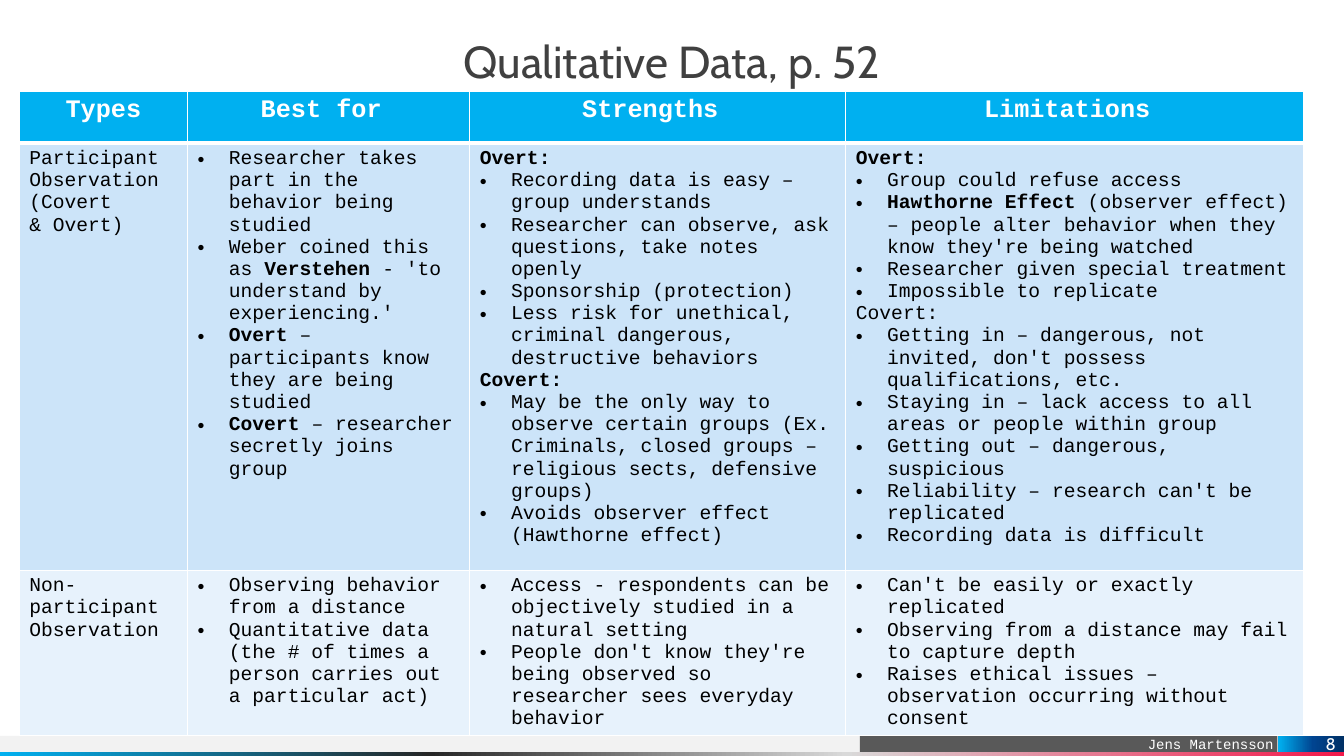
"""Build a slide that compares two kinds of observation in a table."""
from dataclasses import dataclass

from lxml import etree
from pptx import Presentation, util as u
from pptx.dml.color import RGBColor
from pptx.enum import shapes, text
from pptx.oxml.ns import qn


@dataclass(frozen=True)
class Theme:
    """Colours, fonts and type sizes."""
    head: str = "Cabin"
    body: str = "Courier New"
    title: int = 32
    label: int = 18
    cell: int = 14
    foot: int = 10
    page: int = 12
    white: str = "FFFFFF"
    black: str = "000000"
    ink: str = "404040"
    blue: str = "00B0F0"
    pale: str = "F2F2F2"
    gray: str = "595959"
    rows: tuple = ("00B0F0", "CCE4F9", "E7F2FC")
    strip: tuple = ((0, "F2194A"), (37, "D9D9D9"), (68, "262626"), (100, "00B0F0"))
    badge: tuple = ((0, "003065"), (47, "004490"), (100, "00B0F0"))


T = Theme()
WIDE, HIGH = u.Inches(13.33), u.Inches(7.5)
COLS = (12.53, 21, 27.98, 34.06)
ROWS = (6.8, 56.53, 21.87)
INDENT = u.Inches(0.31)
NB = chr(160)

HEADS = ["Types"] + [name + NB for name in ("Best for", "Strengths", "Limitations")]
ACTIVE = [
    [f"Participant Observation (Covert &{NB}Overt)"],
    ["• Researcher takes part in the behavior being studied",
     "• Weber coined this as *Verstehen *- 'to understand by experiencing.'",
     "• *Overt *– participants know they are being studied",
     "• *Covert *– researcher secretly joins group"],
    ["*Overt:*",
     "• Recording data is easy – group understands",
     "• Researcher can observe, ask questions, take notes openly",
     "• Sponsorship (protection)",
     "• Less risk for unethical, criminal dangerous, destructive behaviors",
     "*Covert:*",
     "• May be the only way to observe certain groups (Ex. Criminals, "
     "closed groups – religious sects, defensive groups)",
     "• Avoids observer effect (Hawthorne effect)"],
    ["*Overt:*",
     "• Group could refuse access",
     "• *Hawthorne Effect* (observer effect) – people alter behavior "
     "when they know they're being watched",
     "• Researcher given special treatment",
     "• Impossible to replicate",
     "Covert:",
     "• Getting in – dangerous, not invited, don't possess qualifications, etc.",
     "• Staying in – lack access to all areas or people within group",
     "• Getting out – dangerous, suspicious",
     "• Reliability – research can't be replicated",
     "• Recording data is difficult"],
]
PASSIVE = [
    ["Non-participant Observation"],
    ["• Observing behavior from a distance",
     "• Quantitative data (the # of times a person carries out a particular act)"],
    ["• Access - respondents can be objectively studied in a natural setting",
     "• People don't know they're being observed so researcher sees everyday behavior"],
    ["• Can't be easily or exactly replicated",
     "• Observing from a distance may fail to capture depth",
     "• Raises ethical issues – observation occurring without consent"],
]
GRID = [[[f"*{head}*"] for head in HEADS], ACTIVE, PASSIVE]


def across(share):
    """Turn a percentage of the slide's width into a length."""
    return u.Emu(int(WIDE * share / 100))


def down(share):
    """Turn a percentage of the slide's height into a length."""
    return u.Emu(int(HIGH * share / 100))


def area(left, top, width, height):
    """Turn four percentages into a position and a size."""
    return across(left), down(top), across(width), down(height)


def style(font, face, size, color):
    """Set the face, size and colour of a font."""
    font.name, font.size = face, u.Pt(size)
    font.color.rgb = RGBColor.from_string(color)


def blend(fill, stops):
    """Fill with a gradient that runs from right to left."""
    fill.gradient()
    fill.gradient_angle = 180
    inner = fill._xPr.find(".//" + qn("a:gsLst"))
    inner.clear()
    for share, color in stops:
        stop = etree.SubElement(inner, qn("a:gs"), pos=str(share * 1000))
        etree.SubElement(stop, qn("a:srgbClr"), val=color)


def bar(slide, place, paint):
    """Add a borderless rectangle in a flat colour or a gradient."""
    shape = slide.shapes.add_shape(shapes.MSO_SHAPE.RECTANGLE, *area(*place))
    shape.shadow.inherit = False
    shape.line.fill.background()
    if isinstance(paint, str):
        shape.fill.solid()
        shape.fill.fore_color.rgb = RGBColor.from_string(paint)
    else:
        blend(shape.fill, paint)
    return shape


def caption(shape, words, face, size, anchor, right):
    """Write one white, right-aligned line in a bar."""
    frame = shape.text_frame
    frame.margin_left = frame.margin_top = frame.margin_bottom = 0
    frame.margin_right = u.Inches(right)
    frame.vertical_anchor = anchor
    para = frame.paragraphs[0]
    para.text, para.alignment = words, text.PP_ALIGN.RIGHT
    style(para.font, face, size, T.white)


def title(slide, words):
    """Place and format the title."""
    shape = slide.shapes.title
    shape.left, shape.top, shape.width, shape.height = area(2.93, 5.2, 94.15, 7.87)
    frame = shape.text_frame
    frame.margin_left = frame.margin_right = frame.margin_top = frame.margin_bottom = 0
    frame.vertical_anchor = text.MSO_ANCHOR.TOP
    frame.auto_size = text.MSO_AUTO_SIZE.NONE
    para = frame.paragraphs[0]
    para.text, para.alignment, para.line_spacing = words, text.PP_ALIGN.CENTER, 0.9
    style(para.font, T.head, T.title, T.ink)


def bullet(para):
    """Give a paragraph a hanging bullet."""
    props = para._p.get_or_add_pPr()
    props.set("marL", str(INDENT))
    props.set("indent", str(-INDENT))
    for tag, key, value in (("buFont", "typeface", "Arial"), ("buChar", "char", "•")):
        mark = etree.Element(qn("a:" + tag), {key: value})
        props.insert_element_before(mark, "a:tabLst", "a:defRPr", "a:extLst")


def write(para, line, size, color):
    """Write a line in which asterisks enclose bold words."""
    if line.startswith("• "):
        bullet(para)
        line = line[2:]
    style(para.font, T.body, size, color)
    parts = [(spot % 2 == 1, part) for spot, part in enumerate(line.split("*")) if part]
    for bold, part in parts:
        run = para.add_run()
        run.text = part
        if len(parts) > 1:
            run.font.bold = bold
    if len(parts) == 1:
        para.font.bold = parts[0][0]


def border(cell, row):
    """Draw white edges, with a thick one below the header."""
    props = cell._tc.get_or_add_tcPr()
    thick = {0: "B", 1: "T"}.get(row)
    for side in "LRTB":
        width = u.Pt(3 if side == thick else 1)
        edge = etree.SubElement(props, qn("a:ln" + side), w=str(width))
        solid = etree.SubElement(edge, qn("a:solidFill"))
        etree.SubElement(solid, qn("a:srgbClr"), val=T.white)


def table(slide):
    """Add the comparison table."""
    place = area(1.43, 12.13, sum(COLS), sum(ROWS))
    grid = slide.shapes.add_table(len(ROWS), len(COLS), *place).table
    grid.first_row = grid.horz_banding = False
    for col, share in zip(grid.columns, COLS):
        col.width = across(share)
    for row, (share, cells) in enumerate(zip(ROWS, GRID)):
        grid.rows[row].height = down(share)
        size, color = (T.cell, T.black) if row else (T.label, T.white)
        for col, lines in enumerate(cells):
            cell = grid.cell(row, col)
            border(cell, row)
            cell.fill.solid()
            cell.fill.fore_color.rgb = RGBColor.from_string(T.rows[row])
            frame = cell.text_frame
            for spot, line in enumerate(lines):
                para = frame.add_paragraph() if spot else frame.paragraphs[0]
                para.alignment = text.PP_ALIGN.LEFT if row else text.PP_ALIGN.CENTER
                write(para, line, size, color)


def main():
    """Build and save the slide."""
    deck = Presentation()
    deck.slide_width, deck.slide_height = WIDE, HIGH
    slide = deck.slides.add_slide(deck.slide_layouts[5])
    bar(slide, (0, 97.33, 77.1, 2.13), T.pale)
    name = bar(slide, (63.99, 97.33, 31.06, 2.13), T.gray)
    caption(name, "Jens Martensson", T.body, T.foot, text.MSO_ANCHOR.BOTTOM, 0.04)
    bar(slide, (0, 99.47, 100, 0.53), T.strip)
    title(slide, "Qualitative Data, p. 52")
    table(slide)
    page = bar(slide, (95.12, 97.33, 4.88, 2.13), T.badge)
    caption(page, "8", T.head, T.page, text.MSO_ANCHOR.MIDDLE, 0.08)
    deck.save("out.pptx")


if __name__ == "__main__":
    main()
